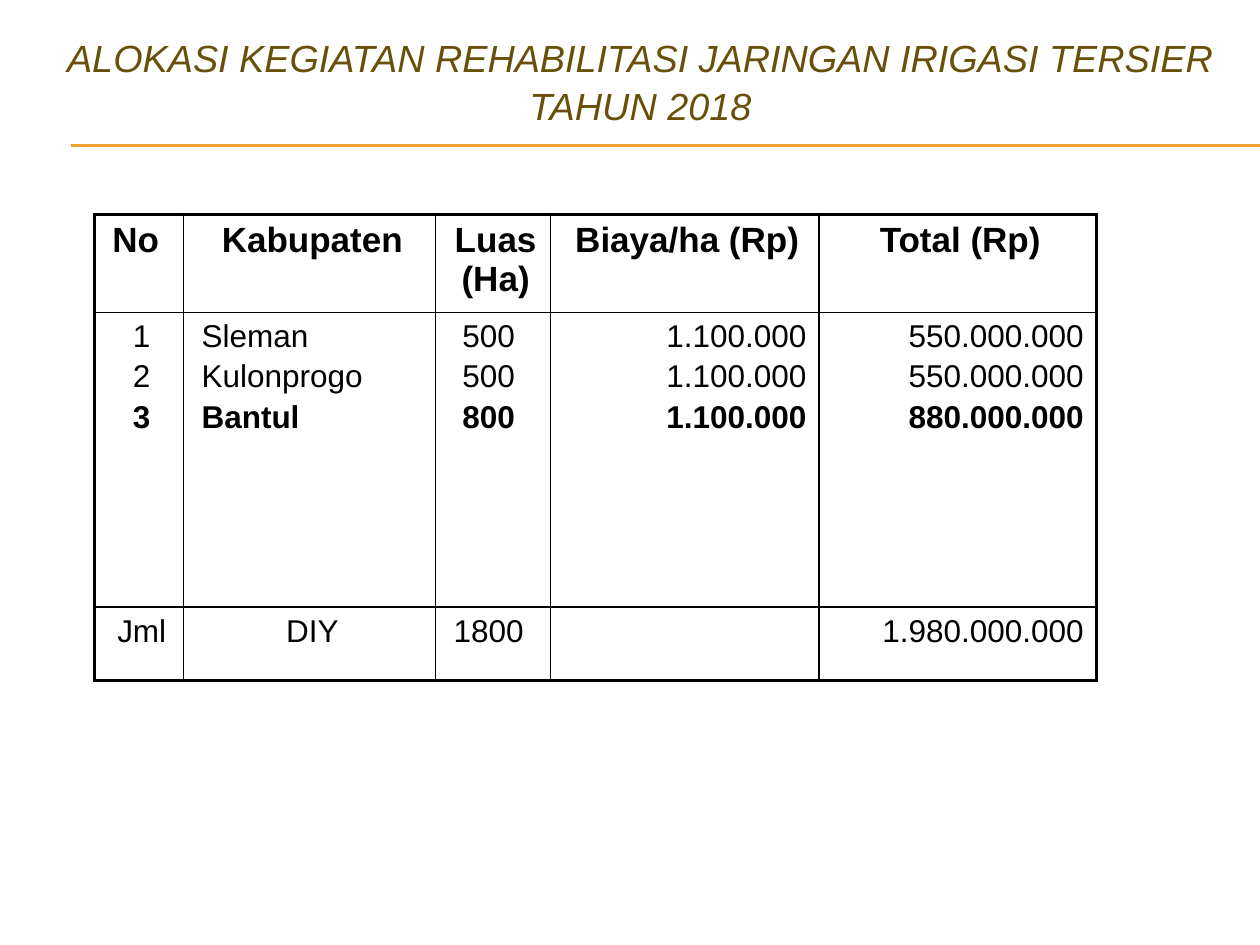
from lxml.etree import SubElement
from pptx import Presentation
from pptx.dml.color import RGBColor
from pptx.enum.shapes import MSO_CONNECTOR
from pptx.enum.text import MSO_ANCHOR, MSO_AUTO_SIZE, PP_ALIGN
from pptx.oxml import parse_xml
from pptx.oxml.ns import nsdecls, qn
from pptx.util import Pt

# Content
TITLE = "ALOKASI KEGIATAN REHABILITASI JARINGAN IRIGASI TERSIER TAHUN 2018"
HEAD = ["No", "Kabupaten", "Luas\v(Ha)", "Biaya/ha (Rp)", "Total (Rp)"]
BODY = [
    ["1", "Sleman", "500 ", "1.100.000", "550.000.000"],
    ["2", "Kulonprogo", "500 ", "1.100.000", "550.000.000"],
    ["3", "Bantul", "800 ", "1.100.000", "880.000.000"],
]
SUM = ["Jml", "DIY", "1800 ", "", "1.980.000.000"]

# Style
HEX = {"title": "695008", "rule": "F0A22E", "ink": "000000"}
COLOR = {name: RGBColor.from_string(code) for name, code in HEX.items()}
FONT = "Arial"
COLS = [51, 144, 65.5, 153.5, 158.5]
ROWS = [56, 168.5, 42]
LEFT, MID, RIGHT = PP_ALIGN.LEFT, PP_ALIGN.CENTER, PP_ALIGN.RIGHT
ALIGN = [
    [LEFT, MID, MID, MID, MID],
    [MID, LEFT, MID, RIGHT, RIGHT],
    [MID, MID, MID, RIGHT, RIGHT],
]
INDENT = 3
THIN, THICK = 1, 2.25


def style(para, size, color, align):
    para.alignment = align
    para.font.name = FONT
    para.font.size = Pt(size)
    para.font.color.rgb = COLOR[color]


def border(cell, sides):
    props = cell._tc.get_or_add_tcPr()
    for i, (side, width) in enumerate(sides):
        line = parse_xml(f'<a:ln{side} {nsdecls("a")} w="{Pt(width)}"><a:solidFill>'
                         f'<a:srgbClr val="{HEX["ink"]}"/></a:solidFill></a:ln{side}>')
        props.insert(i, line)


def fill(cell, lines, row, col):
    cell.fill.background()
    frame = cell.text_frame
    frame.text = "\n".join(lines)
    for i, para in enumerate(frame.paragraphs):
        style(para, 18 if row else 20, "ink", ALIGN[row][col])
        para.font.bold = row == 0 or i == 2
        para.space_before = Pt(3)
        if row == 0 or col < 2:
            para._p.get_or_add_pPr().set("marL", str(Pt(INDENT)))


deck = Presentation()
deck.slide_width, deck.slide_height = Pt(720), Pt(540)
slide = deck.slides.add_slide(deck.slide_layouts[5])

# Double rule under the title
for y in (82.8, 83.5):
    rule = slide.shapes.add_connector(MSO_CONNECTOR.STRAIGHT, Pt(40.5), Pt(y), Pt(720), Pt(y))
    rule.line.color.rgb = COLOR["rule"]
    rule.line.width = Pt(0.75)
    SubElement(rule._element.spPr, qn("a:effectLst"))

# Title
title = slide.shapes.title
title.left, title.top, title.width, title.height = Pt(12), Pt(19), Pt(708), Pt(54)
frame = title.text_frame
frame.text = TITLE
frame.word_wrap = True
frame.auto_size = MSO_AUTO_SIZE.NONE
frame.vertical_anchor = MSO_ANCHOR.MIDDLE
para = frame.paragraphs[0]
style(para, 21.6, "title", MID)
para.font.italic = True
para.line_spacing = 1.06

# Table: header, one tall row that lists the districts, totals
table = slide.shapes.add_table(len(ROWS), len(COLS), Pt(54), Pt(122.5),
                               Pt(sum(COLS)), Pt(sum(ROWS))).table
table.first_row = table.horz_banding = False
for col, width in zip(table.columns, COLS):
    col.width = Pt(width)
for row, height in zip(table.rows, ROWS):
    row.height = Pt(height)

last_row, last_col = len(ROWS) - 1, len(COLS) - 1
for r, group in enumerate([[HEAD], BODY, [SUM]]):
    for c, lines in enumerate(zip(*group)):
        cell = table.cell(r, c)
        fill(cell, lines, r, c)
        edges = {"L": c == 0, "R": c == last_col, "T": r == 0, "B": r == last_row}
        border(cell, [(side, THICK if outer else THIN) for side, outer in edges.items()])

deck.save("out.pptx")
